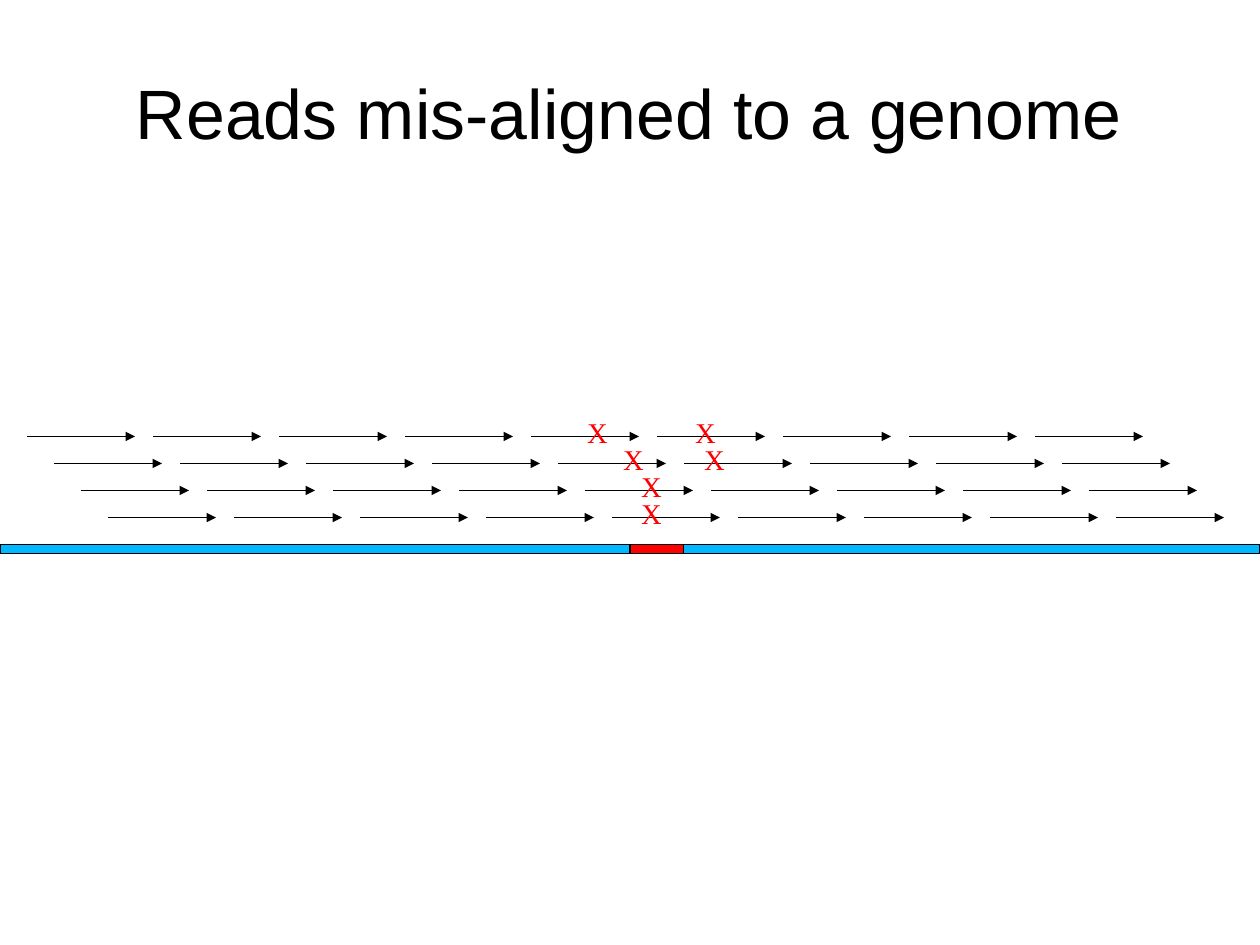
from dataclasses import dataclass

from lxml.etree import SubElement
from pptx import Presentation
from pptx.dml.color import RGBColor
from pptx.enum.shapes import MSO_CONNECTOR, MSO_SHAPE
from pptx.enum.text import MSO_ANCHOR, MSO_AUTO_SIZE, PP_ALIGN
from pptx.oxml.ns import qn
from pptx.util import Cm, Pt


@dataclass(frozen=True)
class Theme:
    ink: RGBColor = RGBColor(0x00, 0x00, 0x00)
    genome: RGBColor = RGBColor(0x00, 0xB8, 0xFF)
    error: RGBColor = RGBColor(0xFF, 0x00, 0x00)
    title_font: str = "Arial"
    mark_font: str = "Times New Roman"
    title_size: Pt = Pt(44)
    mark_size: Pt = Pt(18)
    line_width: Pt = Pt(0.75)


THEME = Theme()

# Layout of the reads, in centimetres
ROWS, READS_PER_ROW = 4, 9
READ_LEFT, READ_TOP = 0.6, 9.7
READ_LENGTH, READ_PITCH, ROW_STEP = 2.4, 2.8, 0.6

# Mismatch marks: row of reads and left edge in centimetres
MISMATCHES = [(3, 14), (2, 14), (1, 13.6), (0, 15.2), (0, 12.8), (1, 15.4)]


def format_run(r, font, size, color):
    r.font.name = font
    r.font.size = size
    r.font.color.rgb = color


def set_title(s, text):
    sp = s.shapes.title
    sp.left, sp.top, sp.width, sp.height = Cm(1.4), Cm(0.84), Cm(25.17), Cm(3.48)
    tf = sp.text_frame
    tf.text = text
    tf.auto_size = MSO_AUTO_SIZE.NONE
    tf.vertical_anchor = MSO_ANCHOR.MIDDLE
    tf.margin_left = tf.margin_right = tf.margin_top = tf.margin_bottom = 0
    p = tf.paragraphs[0]
    p.alignment = PP_ALIGN.CENTER
    p.line_spacing = 0.93
    format_run(p.runs[0], THEME.title_font, THEME.title_size, THEME.ink)


def add_segment(s, left, width, color):
    sp = s.shapes.add_shape(MSO_SHAPE.RECTANGLE, Cm(left), Cm(12.1), Cm(width), Cm(0.2))
    sp.shadow.inherit = False
    sp.fill.solid()
    sp.fill.fore_color.rgb = color
    sp.line.color.rgb = THEME.ink
    sp.line.width = THEME.line_width


def add_read(s, left, top):
    sp = s.shapes.add_connector(
        MSO_CONNECTOR.STRAIGHT, Cm(left), Cm(top), Cm(left + READ_LENGTH), Cm(top))
    sp.line.color.rgb = THEME.ink
    sp.line.width = THEME.line_width
    # Arrowhead, then no shadow
    SubElement(sp.line._get_or_add_ln(), qn("a:tailEnd"), type="triangle")
    SubElement(sp._element.spPr, qn("a:effectLst"))


def add_mismatch(s, row, left):
    top = READ_TOP + (row - 1) * ROW_STEP
    sp = s.shapes.add_textbox(Cm(left), Cm(top), Cm(1), Cm(1.02))
    tf = sp.text_frame
    tf.word_wrap = True
    tf.auto_size = MSO_AUTO_SIZE.SHAPE_TO_FIT_TEXT
    tf.text = "X"
    format_run(tf.paragraphs[0].runs[0], THEME.mark_font, THEME.mark_size, THEME.error)


def main():
    prs = Presentation()
    prs.slide_width, prs.slide_height = Cm(28), Cm(21)
    s = prs.slides.add_slide(prs.slide_layouts[5])
    set_title(s, "Reads mis-aligned to a genome")

    # Genome
    add_segment(s, 0, 28, THEME.genome)

    # Staggered reads
    for column in range(READS_PER_ROW):
        for row in range(ROWS):
            shift = row * ROW_STEP
            add_read(s, READ_LEFT + column * READ_PITCH + shift, READ_TOP + shift)

    # Variant region and the mismatches around it
    add_segment(s, 14, 1.2, THEME.error)
    for row, left in MISMATCHES:
        add_mismatch(s, row, left)

    prs.save("out.pptx")


if __name__ == "__main__":
    main()
